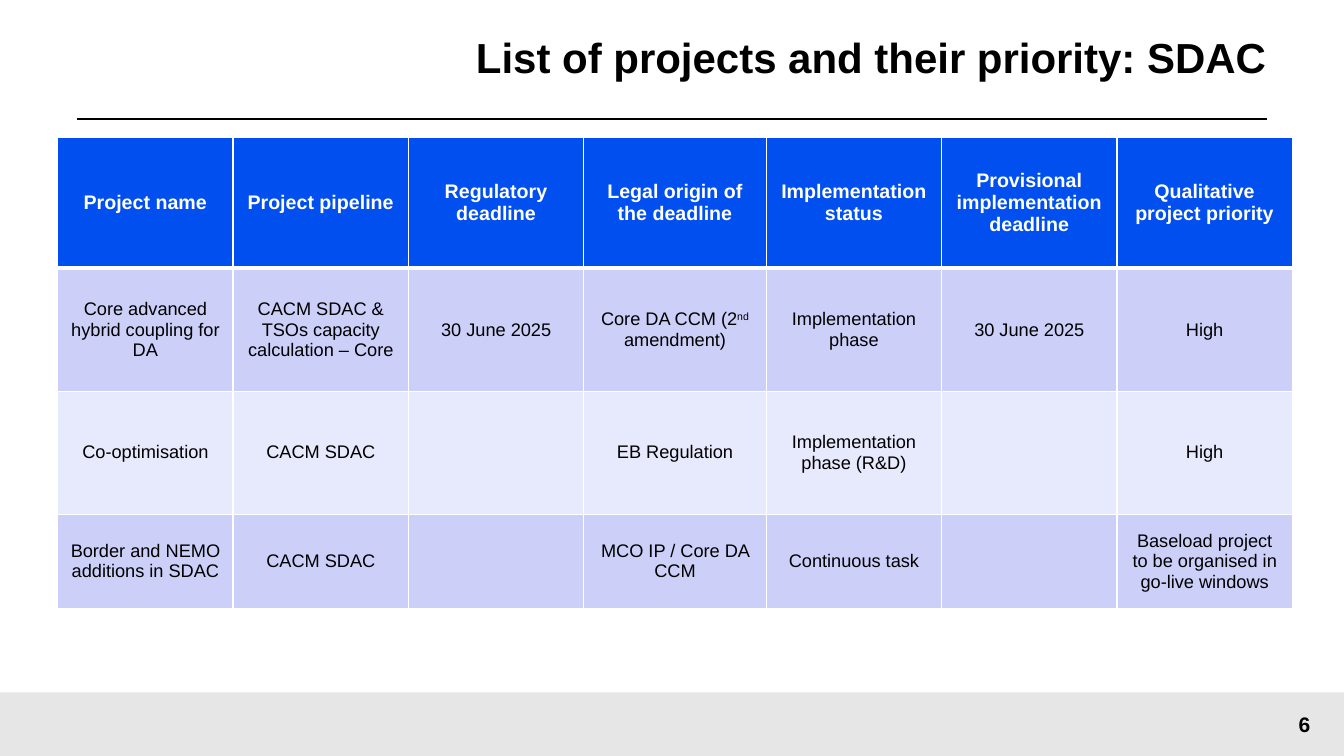
from lxml import etree
from pptx import Presentation
from pptx.dml.color import RGBColor
from pptx.enum.shapes import MSO_CONNECTOR as Connector, MSO_SHAPE as Shape
from pptx.enum.text import MSO_ANCHOR as Anchor, PP_ALIGN as Align
from pptx.oxml.ns import qn
from pptx.util import Pt

HEADER_BLUE, BAND_DARK, BAND_LIGHT = "004FEE", "CCD0F8", "E7E9FC"
BLACK, WHITE, FOOTER_GREY = "000000", "FFFFFF", "E6E6E6"

COLUMN_WIDTHS = [125.28] * 3 + [130.32] + [125.28] * 3
ROW_HEIGHTS = [93.6, 87.84, 87.84, 67.68]
# Text between carets is superscript.
PROJECTS = [
    ["Project name", "Project pipeline", "Regulatory deadline",
     "Legal origin of the deadline", "Implementation status",
     "Provisional implementation deadline", "Qualitative project priority"],
    ["Core advanced hybrid coupling for DA",
     "CACM SDAC & TSOs capacity calculation – Core", "30 June 2025",
     "Core DA CCM (2^nd^ amendment)", "Implementation phase",
     "30 June 2025", "High"],
    ["Co-optimisation", "CACM SDAC", "", "EB Regulation",
     "Implementation phase (R&D)", "", "High"],
    ["Border and NEMO additions in SDAC", "CACM SDAC", "",
     "MCO IP / Core DA CCM", "Continuous task", "",
     "Baseload project to be organised in go-live windows"],
]

TITLE_FORMAT = {"name": "Arial", "size": Pt(30), "bold": True}
NUMBER_FORMAT = {"name": "Arial", "size": Pt(15), "bold": True}
HEADER_FORMAT = {"name": "Arial", "size": Pt(14), "bold": True}
BODY_FORMAT = {"name": "Arial", "size": Pt(13), "bold": False}


def rgb(hex_colour):
    return RGBColor.from_string(hex_colour)


def paint(fill, colour):
    fill.solid()
    fill.fore_color.rgb = rgb(colour)


def write(paragraph, text, font_format, colour, align):
    """Fill a paragraph, raising the text between carets."""
    paragraph.alignment = align
    for index, part in enumerate(text.split("^")):
        run = paragraph.add_run()
        run.text = part
        for key, value in font_format.items():
            setattr(run.font, key, value)
        run.font.color.rgb = rgb(colour)
        if index % 2:
            run.font._element.set("baseline", "30000")


def add_text(slide, box, text, font_format, align, margins, line_spacing=1.0):
    frame = slide.shapes.add_textbox(*map(Pt, box)).text_frame
    frame.word_wrap = True
    frame.vertical_anchor = Anchor.MIDDLE
    for side, margin in zip(("left", "top", "right", "bottom"), margins):
        setattr(frame, f"margin_{side}", Pt(margin))
    paragraph = frame.paragraphs[0]
    paragraph.line_spacing = line_spacing
    write(paragraph, text, font_format, BLACK, align)


def add_footer_band(slide):
    band = slide.shapes.add_shape(
        Shape.RECTANGLE, Pt(0), Pt(494.64), Pt(960), Pt(45.36))
    band.shadow.inherit = False
    paint(band.fill, FOOTER_GREY)
    band.line.fill.background()


def add_title_rule(slide):
    rule = slide.shapes.add_connector(
        Connector.STRAIGHT, Pt(55), Pt(85), Pt(905), Pt(85))
    rule.line.color.rgb = rgb(BLACK)
    rule.line.width = Pt(1.5)
    etree.SubElement(rule._element.spPr, qn("a:effectLst"))


def add_borders(cell, top, bottom):
    """Draw white cell borders, 1 pt at the sides."""
    properties = cell._tc.get_or_add_tcPr()
    for side, width in {"L": 1, "R": 1, "T": top, "B": bottom}.items():
        border = etree.SubElement(properties, qn(f"a:ln{side}"), w=str(Pt(width)))
        solid = etree.SubElement(border, qn("a:solidFill"))
        etree.SubElement(solid, qn("a:srgbClr"), val=WHITE)


def add_project_table(slide):
    table = slide.shapes.add_table(
        len(ROW_HEIGHTS), len(COLUMN_WIDTHS), Pt(41.2), Pt(98),
        Pt(sum(COLUMN_WIDTHS)), Pt(sum(ROW_HEIGHTS))).table
    for column, width in zip(table.columns, COLUMN_WIDTHS):
        column.width = Pt(width)
    for row_index, (row, height) in enumerate(zip(table.rows, ROW_HEIGHTS)):
        row.height = Pt(height)
        is_header = row_index == 0
        band = BAND_DARK if row_index % 2 else BAND_LIGHT
        for cell, text in zip(row.cells, PROJECTS[row_index]):
            cell.vertical_anchor = Anchor.MIDDLE
            add_borders(cell, top=3 if row_index == 1 else 1,
                        bottom=3 if is_header else 1)
            paint(cell.fill, HEADER_BLUE if is_header else band)
            if text:
                write(cell.text_frame.paragraphs[0], text,
                      HEADER_FORMAT if is_header else BODY_FORMAT,
                      WHITE if is_header else BLACK, Align.CENTER)


def main():
    deck = Presentation()
    deck.slide_width, deck.slide_height = Pt(960), Pt(540)
    slide = deck.slides.add_slide(deck.slide_layouts[6])
    add_footer_band(slide)
    add_title_rule(slide)
    add_text(slide, (219, 0, 686, 85), "List of projects and their priority: SDAC",
             TITLE_FORMAT, Align.RIGHT, (0, 14.4, 0, 14.4), line_spacing=0.9)
    add_text(slide, (903.4, 494.64, 56.6, 45.36), "6",
             NUMBER_FORMAT, Align.CENTER, (7.2, 3.6, 7.2, 3.6))
    add_project_table(slide)
    deck.save("out.pptx")


if __name__ == "__main__":
    main()
